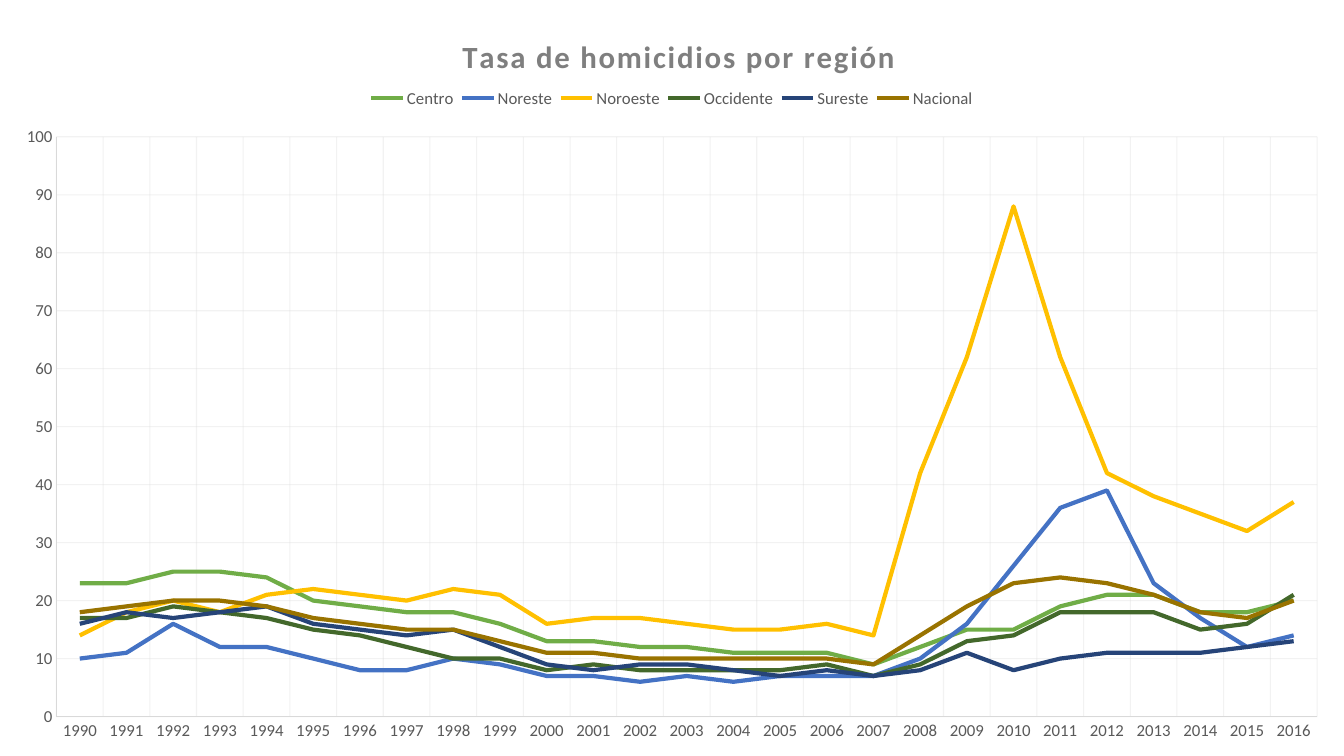
import pptx
import pptx.util
import pptx.chart.data
import pptx.dml.color
import pptx.enum.chart
import pptx.oxml
import pptx.oxml.ns

Inches = pptx.util.Inches
Pt = pptx.util.Pt
RGBColor = pptx.dml.color.RGBColor
qn = pptx.oxml.ns.qn

GREY = RGBColor(0x59, 0x59, 0x59)
TITLE = RGBColor(0x7F, 0x7F, 0x7F)
RULE = RGBColor(0xD9, 0xD9, 0xD9)
GREEN = RGBColor(0x70, 0xAD, 0x47)
BLUE = RGBColor(0x44, 0x72, 0xC4)
GOLD = RGBColor(0xFF, 0xC0, 0x00)
MOSS = RGBColor(0x43, 0x68, 0x2B)
NAVY = RGBColor(0x26, 0x44, 0x78)
BROWN = RGBColor(0x99, 0x73, 0x00)

YEARS = range(1990, 2017)
RATES = [
    ("Centro", GREEN, [23, 23, 25, 25, 24, 20, 19, 18, 18, 16, 13, 13, 12, 12,
                       11, 11, 11, 9, 12, 15, 15, 19, 21, 21, 18, 18, 20]),
    ("Noreste", BLUE, [10, 11, 16, 12, 12, 10, 8, 8, 10, 9, 7, 7, 6, 7,
                       6, 7, 7, 7, 10, 16, 26, 36, 39, 23, 17, 12, 14]),
    ("Noroeste", GOLD, [14, 18, 20, 18, 21, 22, 21, 20, 22, 21, 16, 17, 17, 16,
                        15, 15, 16, 14, 42, 62, 88, 62, 42, 38, 35, 32, 37]),
    ("Occidente", MOSS, [17, 17, 19, 18, 17, 15, 14, 12, 10, 10, 8, 9, 8, 8,
                         8, 8, 9, 7, 9, 13, 14, 18, 18, 18, 15, 16, 21]),
    ("Sureste", NAVY, [16, 18, 17, 18, 19, 16, 15, 14, 15, 12, 9, 8, 9, 9,
                       8, 7, 8, 7, 8, 11, 8, 10, 11, 11, 11, 12, 13]),
    ("Nacional", BROWN, [18, 19, 20, 20, 19, 17, 16, 15, 15, 13, 11, 11, 10, 10,
                         10, 10, 10, 9, 14, 19, 23, 24, 23, 21, 18, 17, 20]),
]


class Deck:
    face = "Calibri"

    def __init__(self, wide, high):
        self.deck = pptx.Presentation()
        self.deck.slide_width = self.wide = wide
        self.deck.slide_height = self.high = high
        self.slide = self.deck.slides.add_slide(self.deck.slide_layouts[6])

    def font(self, font, size, color):
        font.name = self.face
        font.size = Pt(size)
        font.color.rgb = color

    def place(self, chart, tag, inner=False, **spots):
        part = next(chart.element.iter(qn(tag)))
        for old in part.findall(qn("c:layout")):
            part.remove(old)
        body = '<c:layoutTarget val="inner"/>' if inner else ""
        body += "".join(f'<c:{key}Mode val="edge"/>' for key in ("x", "y"))
        body += "".join(f'<c:{key} val="{val}"/>' for key, val in spots.items())
        space = pptx.oxml.ns.nsdecls("c")
        layout = pptx.oxml.parse_xml(
            f"<c:layout {space}><c:manualLayout>{body}</c:manualLayout></c:layout>")
        after = part.find(qn("c:overlay"))
        part.insert(0 if after is None else part.index(after), layout)

    def axis(self, axis):
        axis.major_tick_mark = pptx.enum.chart.XL_TICK_MARK.NONE
        axis.minor_tick_mark = pptx.enum.chart.XL_TICK_MARK.NONE
        self.font(axis.tick_labels.font, 12, GREY)
        axis.has_major_gridlines = True
        for line, width in ((axis.format.line, 0.25),
                            (axis.major_gridlines.format.line, 0.75)):
            line.color.rgb = RULE
            line.width = Pt(width)

    def fade(self, chart, share):
        for grid in chart.element.iter(qn("c:majorGridlines")):
            for color in grid.iter(qn("a:srgbClr")):
                alpha = color.makeelement(qn("a:alpha"), {"val": str(share * 1000)})
                color.append(alpha)

    def title(self, chart, text):
        frame = chart.chart_title.text_frame
        frame.text = text
        para = frame.paragraphs[0]
        self.font(para.font, 22, TITLE)
        para.font.bold = True
        for props in next(chart.element.iter(qn("c:title"))).iter(qn("a:defRPr")):
            props.set("spc", "140")
        chart.chart_title.include_in_layout = False

    def lines(self, title, cats, rows):
        data = pptx.chart.data.CategoryChartData()
        data.categories = [str(cat) for cat in cats]
        for name, color, vals in rows:
            data.add_series(name, vals)
        kind = pptx.enum.chart.XL_CHART_TYPE.LINE
        chart = self.slide.shapes.add_chart(
            kind, 0, 0, self.wide, self.high, data).chart
        self.font(chart.font, 10, GREY)
        self.title(chart, title)
        chart.has_legend = True
        chart.legend.position = pptx.enum.chart.XL_LEGEND_POSITION.TOP
        chart.legend.include_in_layout = False
        self.font(chart.legend.font, 12, GREY)
        self.axis(chart.category_axis)
        self.axis(chart.value_axis)
        scale = chart.value_axis
        scale.minimum_scale, scale.maximum_scale, scale.major_unit = 0, 100, 10
        self.fade(chart, 32)
        chart.plots[0].vary_by_categories = False
        for series, (name, color, vals) in zip(chart.plots[0].series, rows):
            series.smooth = False
            series.marker.style = pptx.enum.chart.XL_MARKER_STYLE.NONE
            series.format.line.color.rgb = color
            series.format.line.width = Pt(3)
        self.place(chart, "c:title", x=0.34, y=0.04)
        self.place(chart, "c:legend", x=0.27, y=0.11, w=0.46, h=0.04)
        self.place(chart, "c:plotArea", True, x=0.042, y=0.181, w=0.938, h=0.767)


def main():
    page = Deck(Inches(13.33), Inches(7.5))
    page.lines("Tasa de homicidios por región", YEARS, RATES)
    page.deck.save("out.pptx")


if __name__ == "__main__":
    main()
